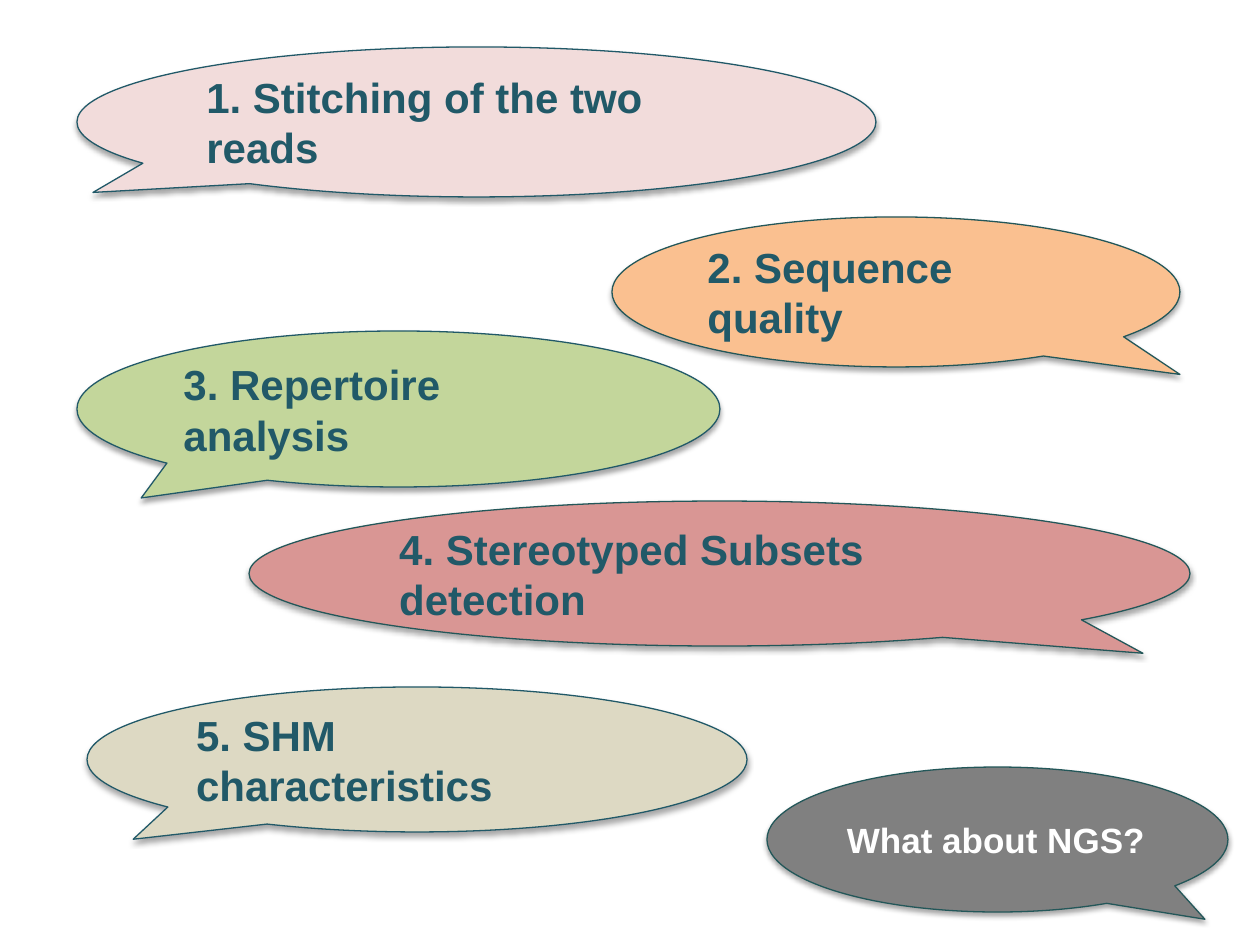
from lxml import etree
from pptx import Presentation
from pptx.dml.color import RGBColor
from pptx.enum.shapes import MSO_SHAPE
from pptx.enum.text import MSO_ANCHOR, PP_ALIGN
from pptx.oxml.ns import qn
from pptx.util import Inches, Pt

CALLOUT = MSO_SHAPE.OVAL_CALLOUT
MIDDLE = MSO_ANCHOR.MIDDLE
LEFT = PP_ALIGN.LEFT
SCALE = Inches(1) / 126
FONT = "Arial"

COLOURS = {
    "pink": "F2DCDB", "orange": "FAC090", "green": "C3D69B",
    "rose": "D99694", "tan": "DDD9C3", "grey": "808080",
    "teal": "215968", "edge": "235759", "white": "FFFFFF", "shade": "000000",
}

# text, box in px (left, top, width, height), tail tip, fill, line, ink, size
BUBBLES = [
    ("1. Stitching of the two reads", (77, 47, 799, 150), (-0.48, 0.47),
     "pink", "teal", "teal", 24),
    ("2. Sequence quality", (612, 217, 568, 150), (0.5, 0.55),
     "orange", "edge", "teal", 24),
    ("3. Repertoire analysis", (77, 331, 643, 156), (-0.4, 0.57),
     "green", "teal", "teal", 24),
    ("4. Stereotyped Subsets detection", (249, 501, 941, 145), (0.45, 0.55),
     "rose", "edge", "teal", 24),
    ("5. SHM characteristics", (87, 687, 660, 145), (-0.43, 0.55),
     "tan", "teal", "teal", 24),
    ("What about NGS?", (767, 767, 461, 145), (0.45, 0.55),
     "grey", "edge", "white", 20),
]


def px(n):
    return round(n * SCALE)


def rgb(name):
    return RGBColor.from_string(COLOURS[name])


def add_shadow(shape):
    """Cast a soft shadow straight down."""
    effects = etree.SubElement(shape.element.spPr, qn("a:effectLst"))
    outer = etree.SubElement(effects, qn("a:outerShdw"), blurRad=str(Pt(3.1)),
                             dist=str(Pt(1.8)), dir="5400000", rotWithShape="0")
    tint = etree.SubElement(outer, qn("a:srgbClr"), val=COLOURS["shade"])
    etree.SubElement(tint, qn("a:alpha"), val="35000")


def add_bubble(slide, text, box, tip, fill, line, ink, size):
    shape = slide.shapes.add_shape(CALLOUT, *map(px, box))
    for i, value in enumerate(tip):
        shape.adjustments[i] = value
    shape.fill.solid()
    shape.fill.fore_color.rgb = rgb(fill)
    shape.line.color.rgb = rgb(line)
    shape.line.width = Pt(0.75)
    add_shadow(shape)

    frame = shape.text_frame
    frame.word_wrap = True
    frame.vertical_anchor = MIDDLE
    para = frame.paragraphs[0]
    para.text = text
    para.alignment = LEFT
    font = para.font
    font.name, font.size, font.bold = FONT, Pt(size), True
    font.color.rgb = rgb(ink)


def main():
    deck = Presentation()
    deck.slide_width, deck.slide_height = Inches(10), Inches(7.5)
    slide = deck.slides.add_slide(deck.slide_layouts[6])
    for bubble in BUBBLES:
        add_bubble(slide, *bubble)
    deck.save("out.pptx")


if __name__ == "__main__":
    main()
